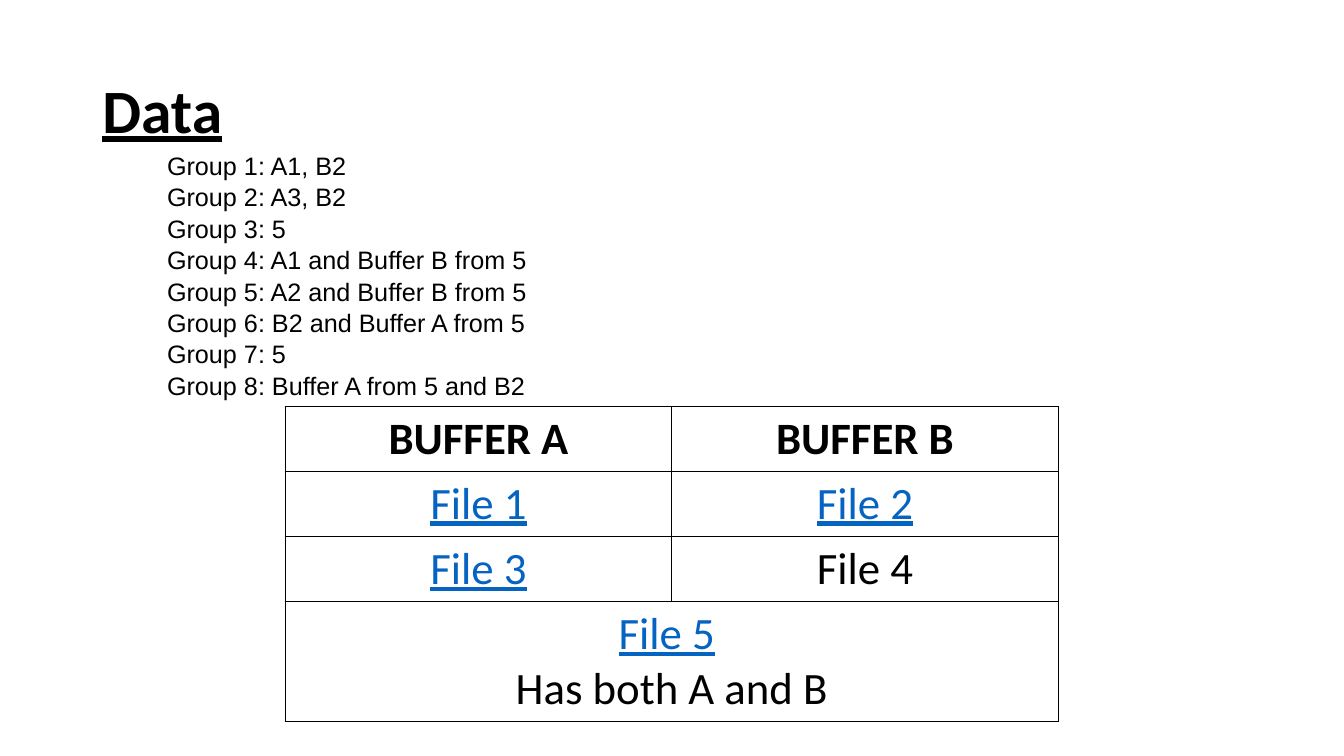
from dataclasses import dataclass

from lxml.etree import SubElement
from pptx import Presentation
from pptx.dml.color import RGBColor as Color
from pptx.enum.text import MSO_ANCHOR as Anchor, PP_ALIGN as Align
from pptx.oxml.ns import qn
from pptx.util import Cm, Pt


@dataclass(frozen=True)
class Theme:
    ink: str = "000000"
    link: str = "0563C1"
    heading_font: str = "Calibri"
    list_font: str = "Arial"
    title_size: int = 44
    table_size: int = 32
    list_size: int = 18
    border: int = 1


GROUPS = [
    "A1, B2",
    "A3, B2",
    "5",
    "A1 and Buffer B from 5",
    "A2 and Buffer B from 5",
    "B2 and Buffer A from 5",
    "5",
    "Buffer A from 5 and B2",
]
BUFFER_ROWS = [
    ["BUFFER A", "BUFFER B"],
    ["File 1", "File 2"],
    ["File 3", "File 4"],
    ["File 5 \nHas both A and B"],
]
LINKED_FILES = {"File 1", "File 2", "File 3", "File 5"}


class SlideBuilder:
    def __init__(self, slide, theme):
        self.slide = slide
        self.theme = theme

    def style(self, span, font, size, color=None, bold=False, underline=False):
        span.font.name = font
        span.font.size = Pt(size)
        span.font.color.rgb = Color.from_string(color or self.theme.ink)
        span.font.bold = bold
        span.font.underline = underline

    def text(self, lines, left, top, width, height, font, size,
             spacing, anchor=Anchor.TOP, **emphasis):
        box = self.slide.shapes.add_textbox(Cm(left), Cm(top), Cm(width), Cm(height))
        frame = box.text_frame
        frame.word_wrap = True
        frame.vertical_anchor = anchor
        frame.text = "\n".join(lines)
        for para in frame.paragraphs:
            para.line_spacing = spacing
            for span in para.runs:
                self.style(span, font, size, **emphasis)

    def border(self, cell):
        properties = cell._tc.get_or_add_tcPr()
        for side in ("a:lnL", "a:lnR", "a:lnT", "a:lnB"):
            line = SubElement(properties, qn(side), w=str(Pt(self.theme.border)))
            fill = SubElement(line, qn("a:solidFill"))
            SubElement(fill, qn("a:srgbClr"), val=self.theme.ink)

    def cell_text(self, cell, text, bold):
        """Centre the text, and colour and underline file names that are links."""
        theme = self.theme
        cell.text_frame.text = text
        for para in cell.text_frame.paragraphs:
            para.alignment = Align.CENTER
            name = para.text.rstrip()
            tail = para.text[len(name):]
            para.text = name
            linked = name in LINKED_FILES
            self.style(para.runs[0], theme.heading_font, theme.table_size,
                       theme.link if linked else theme.ink, bold, linked)
            if tail:
                span = para.add_run()
                span.text = tail
                self.style(span, theme.heading_font, theme.table_size)

    def table(self, rows, left, top, width, heights):
        columns = len(rows[0])
        table = self.slide.shapes.add_table(
            len(rows), columns, Cm(left), Cm(top), Cm(width), Cm(sum(heights))).table
        table.first_row = table.horz_banding = False
        for index, (row, height) in enumerate(zip(rows, heights)):
            table.rows[index].height = Cm(height)
            for cell in table.rows[index].cells:
                self.border(cell)
                cell.fill.background()
            if len(row) < columns:
                table.cell(index, 0).merge(table.cell(index, columns - 1))
            for column, text in enumerate(row):
                self.cell_text(table.cell(index, column), text, bold=index == 0)


def main():
    theme = Theme()
    deck = Presentation()
    deck.slide_width, deck.slide_height = Cm(33.87), Cm(19.05)
    page = SlideBuilder(deck.slides.add_slide(deck.slide_layouts[6]), theme)

    page.text(["Data"], 2.33, 1.01, 29.21, 3.68, theme.heading_font,
              theme.title_size, 0.9, Anchor.MIDDLE, bold=True, underline=True)
    page.table(BUFFER_ROWS, 7.19, 10.24, 19.48, [1.64, 1.64, 1.64, 3.02])
    group_lines = [f"Group {number}: {files}" for number, files in enumerate(GROUPS, 1)]
    page.text(group_lines, 3.96, 3.63, 17.83, 6.4, theme.list_font,
              theme.list_size, 1.04)
    deck.save("out.pptx")


if __name__ == "__main__":
    main()
